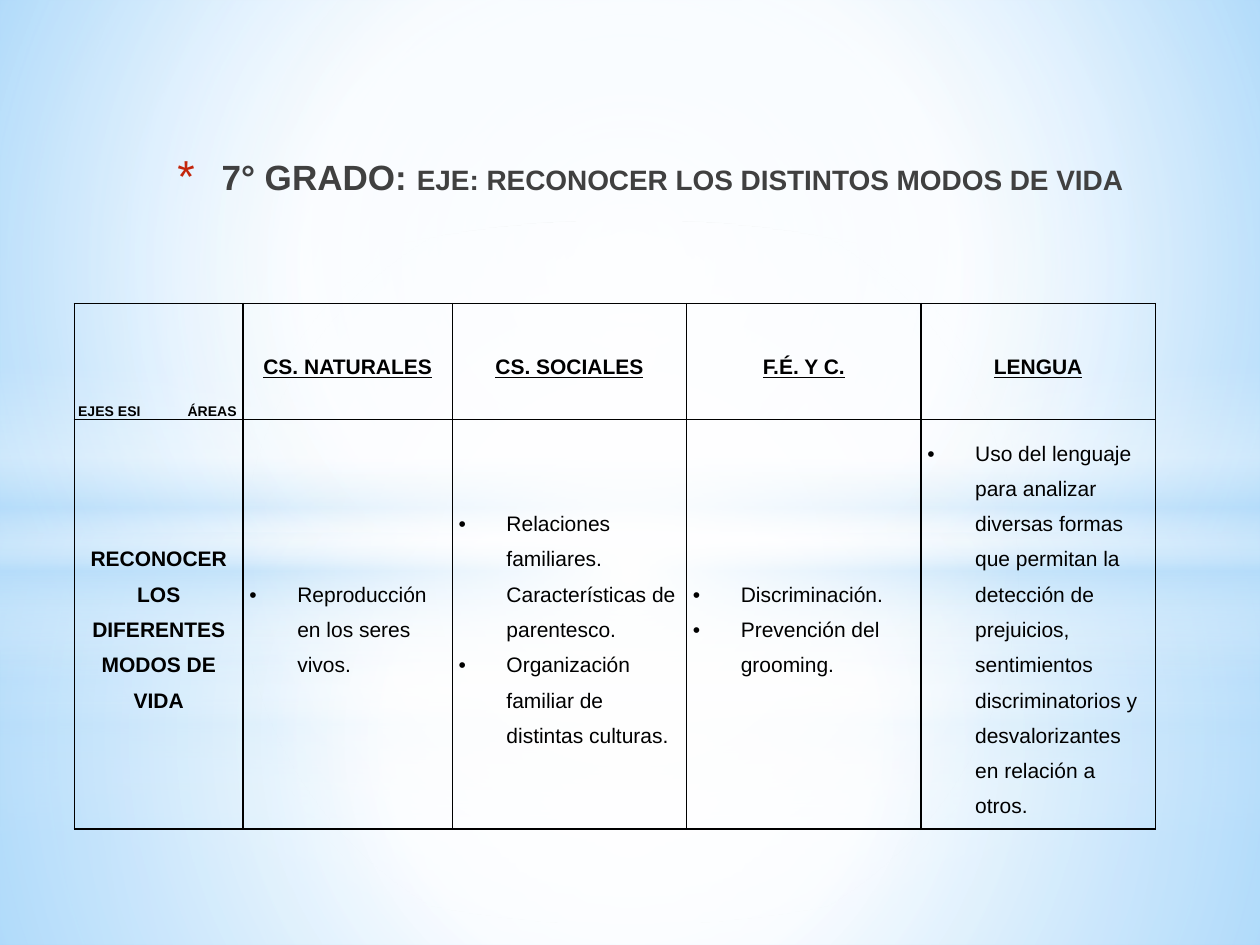
from lxml import etree
from pptx import Presentation
from pptx.dml.color import RGBColor
from pptx.enum import shapes, text
from pptx.oxml import parse_xml
from pptx.oxml.ns import nsdecls, qn
from pptx.util import Inches, Pt

WHITE, SKY = "FFFFFF", "B4DCFA"
CENTER = (50, 50, 50, 50)


def rgb(value):
    return RGBColor.from_string(value)


class Deck:
    font, ink = "Arial", "000000"

    def __init__(self, width, height):
        self.prs = Presentation()
        self.prs.slide_width, self.prs.slide_height = Inches(width), Inches(height)
        self.s = self.prs.slides.add_slide(self.prs.slide_layouts[5])

    def area(self, x, y, w, h):
        """Turn shares of the slide (in percent) into lengths."""
        pw, ph = self.prs.slide_width, self.prs.slide_height
        return [int(v * full / 100) for v, full in zip((x, y, w, h), (pw, ph, pw, ph))]

    def gradient(self, owner, fill, stops, focus=None):
        """Stops are (position, colour, opacity); without focus it runs downwards."""
        fill.solid()
        gs = "".join(f'<a:gs pos="{pos * 1000}"><a:srgbClr val="{color}">'
                     f'<a:alpha val="{alpha * 1000}"/></a:srgbClr></a:gs>'
                     for pos, color, alpha in stops)
        if focus:
            sides = " ".join(f'{side}="{v * 1000}"' for side, v in zip("ltrb", focus))
            way = f'<a:path path="circle"><a:fillToRect {sides}/></a:path>'
        else:
            way = '<a:lin ang="5400000" scaled="0"/>'
        solid = owner.find(".//" + qn("a:solidFill"))
        solid.getparent().replace(solid, parse_xml(
            f'<a:gradFill {nsdecls("a")} rotWithShape="1"><a:gsLst>{gs}</a:gsLst>{way}</a:gradFill>'))

    def background(self, stops, focus):
        self.gradient(self.s._element, self.s.background.fill, stops, focus)

    def glow(self, kind, box, stops, focus=None):
        sp = self.s.shapes.add_shape(kind, *self.area(*box))
        sp.shadow.inherit = False
        sp.line.fill.background()
        self.gradient(sp._element, sp.fill, stops, focus)

    def style(self, r, size, color=None, bold=False, underline=False):
        f = r.font
        f.name, f.size, f.bold, f.underline = self.font, Pt(size), bold, underline
        f.color.rgb = rgb(color or self.ink)

    def bullet(self, p, char, indent, color=None, percent=100):
        pPr = p._p.get_or_add_pPr()
        pPr.set("marL", str(Inches(indent)))
        pPr.set("indent", str(-Inches(indent)))
        color_el = etree.SubElement(pPr, qn("a:buClr"))
        etree.SubElement(color_el, qn("a:srgbClr"), val=color or self.ink)
        etree.SubElement(pPr, qn("a:buSzPct"), val=str(percent * 1000))
        etree.SubElement(pPr, qn("a:buFont"), typeface=self.font)
        etree.SubElement(pPr, qn("a:buChar"), char=char)

    def title(self, box, parts, color, mark):
        sp = self.s.shapes.title
        self.s.shapes._spTree.append(sp._element)  # in front of the glows
        sp.left, sp.top, sp.width, sp.height = self.area(*box)
        tf = sp.text_frame
        tf.vertical_anchor = text.MSO_ANCHOR.BOTTOM
        tf.auto_size = text.MSO_AUTO_SIZE.NONE
        p = tf.paragraphs[0]
        p.alignment = text.PP_ALIGN.RIGHT
        self.bullet(p, "*", 0.35, mark, 128)
        for words, size in parts:
            r = p.add_run()
            r.text = words
            self.style(r, size, color, bold=True)

    def table(self, box, widths, heights):
        frame = self.s.shapes.add_table(len(heights), len(widths), *self.area(*box))
        t = frame.table
        t.first_row = t.horz_banding = False
        for col, w in zip(t.columns, widths):
            col.width = Inches(w)
        for row, h in zip(t.rows, heights):
            row.height = Inches(h)
        return t

    def cell(self, c, lines, size=12, inset=0.05, bold=False, underline=False,
             bullets=False, align=text.PP_ALIGN.CENTER, anchor=text.MSO_ANCHOR.MIDDLE):
        c.fill.background()
        c.vertical_anchor = anchor
        c.margin_left = c.margin_right = Inches(inset)
        c.margin_top = c.margin_bottom = 0
        tcPr = c._tc.get_or_add_tcPr()
        for i, side in enumerate("LRTB"):
            tcPr.insert(i, parse_xml(
                f'<a:ln{side} {nsdecls("a")} w="{Pt(1)}"><a:solidFill>'
                f'<a:srgbClr val="{self.ink}"/></a:solidFill></a:ln{side}>'))
        c.text_frame.text = "\n".join(lines)
        for p in c.text_frame.paragraphs:
            p.line_spacing = 1.5
            p.alignment = text.PP_ALIGN.LEFT if bullets else align
            if bullets:
                self.bullet(p, "•", 0.38)
            for r in p.runs:
                self.style(r, size, bold=bold, underline=underline)

    def right_tab(self, p, at):
        tabs = etree.SubElement(p._p.get_or_add_pPr(), qn("a:tabLst"))
        etree.SubElement(tabs, qn("a:tab"), pos=str(Inches(at)), algn="r")


def main():
    d = Deck(10, 7.5)
    rect, oval = shapes.MSO_SHAPE.RECTANGLE, shapes.MSO_SHAPE.OVAL

    # Sky background: two layers of ground, sky, horizon band and central light
    d.background([(0, "9ED5FF", 100), (60, WHITE, 100), (100, "5BB9FF", 100)], (20, 10, 20, 60))
    band = [(0, WHITE, 0), (29, WHITE, 30), (45, SKY, 40),
            (55, WHITE, 26), (65, SKY, 60), (100, WHITE, 0)]
    for horizon, band_top, more, less, light in ((74.4, 54.93, 0, 1, 56),
                                                 (56.4, 38.67, 1, 0, 54)):
        d.glow(rect, (0, horizon, 100, 100 - horizon),
               [(0, WHITE, 91 + more), (37, WHITE, 76 + more), (100, SKY, 80 - less)], CENTER)
        d.glow(rect, (0, 0, 100, horizon),
               [(0, WHITE, 89 + more), (48, WHITE, 62 + more), (100, SKY, 80 - less)], CENTER)
        d.glow(rect, (0, band_top, 100, 33.33), band)
        d.glow(oval, (0, 23.33, 100, 74.4), [(0, WHITE, 100), (light, WHITE, 0)], CENTER)

    # Title
    d.title((5.9, 9.07, 84.3, 12.53),
            [("7° GRADO: ", 20), ("EJE: RECONOCER LOS DISTINTOS MODOS DE VIDA", 16)],
            "404040", "C3260C")

    # Table of areas and contents
    areas = {
        "CS. NATURALES": ["Reproducción en los seres vivos."],
        "CS. SOCIALES": ["Relaciones familiares. Características de parentesco.",
                         "Organización familiar de distintas culturas."],
        "F.É. Y C.": ["Discriminación.", "Prevención del grooming."],
        "LENGUA": ["Uso del lenguaje para analizar diversas formas que permitan la "
                   "detección de prejuicios, sentimientos discriminatorios y "
                   "desvalorizantes en relación a otros."],
    }
    t = d.table((5.9, 32.13, 85.8, 55.6), [1.34, 1.66] + [1.86] * 3, [0.92, 3.25])
    corner = t.cell(0, 0)
    d.cell(corner, ["EJES ESI\tÁREAS"], size=8, inset=0.03, bold=True,
           align=text.PP_ALIGN.LEFT, anchor=text.MSO_ANCHOR.BOTTOM)
    d.right_tab(corner.text_frame.paragraphs[0], 1.26)
    d.cell(t.cell(1, 0), ["RECONOCER LOS DIFERENTES MODOS DE VIDA"], bold=True)
    for col, (area, contents) in enumerate(areas.items(), 1):
        d.cell(t.cell(0, col), [area], inset=0.03, bold=True, underline=True)
        d.cell(t.cell(1, col), contents, bullets=True)

    d.prs.save("out.pptx")


if __name__ == "__main__":
    main()
